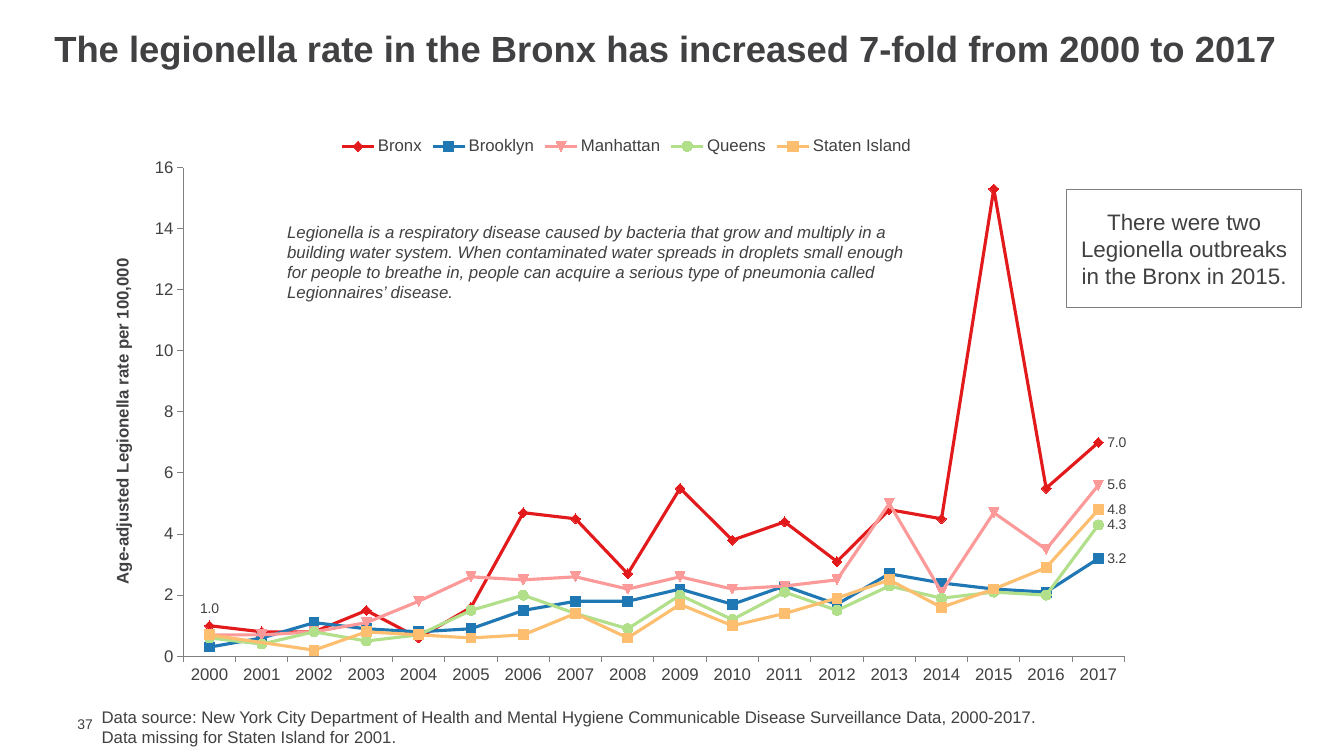
from dataclasses import dataclass

from lxml.etree import SubElement
from pptx import Presentation
from pptx.chart.chart import Chart
from pptx.chart.data import CategoryChartData
from pptx.dml.color import RGBColor
from pptx.enum.chart import XL_CHART_TYPE as ChartType
from pptx.enum.chart import XL_LABEL_POSITION as LabelPosition
from pptx.enum.chart import XL_LEGEND_POSITION as LegendPosition
from pptx.enum.chart import XL_MARKER_STYLE as Marker
from pptx.enum.chart import XL_TICK_MARK as TickMark
from pptx.enum.shapes import MSO_SHAPE as ShapeKind
from pptx.enum.text import MSO_ANCHOR as Anchor
from pptx.enum.text import PP_ALIGN as Align
from pptx.oxml.ns import qn
from pptx.slide import Slide
from pptx.text.text import Font, TextFrame
from pptx.util import Inches, Pt


@dataclass(frozen=True)
class Theme:
    font: str = "Arial"
    ink: str = "414042"
    rule: str = "808080"
    paper: str = "FFFFFF"
    title: int = 26
    callout: int = 16
    body: int = 12
    small: int = 10
    hairline: float = 0.75
    series_line: float = 2.25
    marker: int = 7


@dataclass(frozen=True)
class TextBlock:
    text: str
    left: float
    top: float
    width: float
    height: float
    size: int
    bold: bool = False
    italic: bool = False
    anchor: Anchor = Anchor.TOP
    line_spacing: float = 1.0
    margin: float = 0.05
    right_margin: float = 0.1


@dataclass(frozen=True)
class Borough:
    name: str
    rates: tuple[float | None, ...]
    color: str
    marker: Marker | None = None


THEME = Theme()
YEARS = range(2000, 2018)
PLOT_AREA = {"x": 0.072, "y": 0.074, "w": 0.909, "h": 0.869}

BOROUGHS = (
    Borough("Bronx", (1, 0.8, 0.8, 1.5, 0.6, 1.6, 4.7, 4.5, 2.7, 5.5, 3.8, 4.4,
                      3.1, 4.8, 4.5, 15.3, 5.5, 7), "E31A1C", Marker.DIAMOND),
    Borough("Brooklyn", (0.3, 0.6, 1.1, 0.9, 0.8, 0.9, 1.5, 1.8, 1.8, 2.2, 1.7, 2.3,
                         1.7, 2.7, 2.4, 2.2, 2.1, 3.2), "1F78B4", Marker.SQUARE),
    Borough("Manhattan", (0.7, 0.7, 0.8, 1.1, 1.8, 2.6, 2.5, 2.6, 2.2, 2.6, 2.2, 2.3,
                          2.5, 5, 2.1, 4.7, 3.5, 5.6), "FB9A99"),
    Borough("Queens", (0.6, 0.4, 0.8, 0.5, 0.7, 1.5, 2, 1.4, 0.9, 2, 1.2, 2.1,
                       1.5, 2.3, 1.9, 2.1, 2, 4.3), "B2DF8A", Marker.CIRCLE),
    Borough("Staten Island", (0.7, None, 0.2, 0.8, 0.7, 0.6, 0.7, 1.4, 0.6, 1.7, 1, 1.4,
                              1.9, 2.5, 1.6, 2.2, 2.9, 4.8), "FDBF6F", Marker.SQUARE),
)

PAGE_NUMBER = TextBlock("37", 0.67, 7.1, 0.43, 0.17, THEME.small,
                        anchor=Anchor.MIDDLE, margin=0, right_margin=0)
SOURCE = TextBlock(
    "Data source: New York City Department of Health and Mental Hygiene "
    "Communicable Disease Surveillance Data, 2000-2017.\n"
    "Data missing for Staten Island for 2001.",
    0.91, 6.96, 9.92, 0.71, THEME.body)
TITLE = TextBlock(
    "The legionella rate in the Bronx has increased 7-fold from 2000 to 2017",
    0.44, 0.29, 12.46, 0.45, THEME.title, bold=True, anchor=Anchor.MIDDLE,
    line_spacing=0.8)
DEFINITION = TextBlock(
    "Legionella is a respiratory disease caused by bacteria that grow and multiply in a "
    "building water system. When contaminated water spreads in droplets small enough for "
    "people to breathe in, people can acquire a serious type of pneumonia called "
    "Legionnaires’ disease.",
    2.75, 2.15, 6.5, 0.91, THEME.body, italic=True)


def style_font(font: Font, size: int, bold: bool = False, italic: bool = False) -> None:
    """Apply the theme typeface and ink to a font."""
    font.name, font.size, font.bold, font.italic = THEME.font, Pt(size), bold, italic
    font.color.rgb = RGBColor.from_string(THEME.ink)


def style_text(frame: TextFrame, size: int, bold: bool = False, italic: bool = False) -> None:
    """Format every run of a text frame."""
    for paragraph in frame.paragraphs:
        for run in paragraph.runs:
            style_font(run.font, size, bold, italic)


def add_text(slide: Slide, block: TextBlock) -> None:
    """Draw a wrapped text box."""
    shape = slide.shapes.add_textbox(*map(Inches, (block.left, block.top, block.width, block.height)))
    frame = shape.text_frame
    frame.word_wrap = True
    frame.vertical_anchor = block.anchor
    frame.margin_top = frame.margin_bottom = Inches(block.margin)
    frame.margin_right = Inches(block.right_margin)
    frame.text = block.text
    for paragraph in frame.paragraphs:
        paragraph.line_spacing = block.line_spacing
    style_text(frame, block.size, block.bold, block.italic)


def add_callout(slide: Slide) -> None:
    """Draw the framed note on the 2015 outbreaks."""
    shape = slide.shapes.add_shape(ShapeKind.RECTANGLE, *map(Inches, (10.58, 1.88, 2.33, 1.17)))
    shape.shadow.inherit = False
    shape.fill.solid()
    shape.fill.fore_color.rgb = RGBColor.from_string(THEME.paper)
    shape.line.color.rgb = RGBColor.from_string(THEME.rule)
    shape.line.width = Pt(THEME.hairline)
    frame = shape.text_frame
    frame.word_wrap = True
    frame.vertical_anchor = Anchor.MIDDLE
    frame.text = "There were two Legionella outbreaks in the Bronx in 2015."
    frame.paragraphs[0].alignment = Align.CENTER
    style_text(frame, THEME.callout)


def style_axes(chart: Chart) -> None:
    """Set the scale, ticks, lines and title of both axes."""
    for axis in (chart.category_axis, chart.value_axis):
        axis.has_major_gridlines = False
        axis.major_tick_mark = TickMark.OUTSIDE
        axis.minor_tick_mark = TickMark.NONE
        axis.format.line.color.rgb = RGBColor.from_string(THEME.rule)
        axis.format.line.width = Pt(THEME.hairline)
        style_font(axis.tick_labels.font, THEME.body)
    value_axis = chart.value_axis
    value_axis.minimum_scale, value_axis.maximum_scale, value_axis.major_unit = 0, 16, 2
    value_axis.tick_labels.number_format = "0"
    value_axis.tick_labels.number_format_is_linked = False
    frame = value_axis.axis_title.text_frame
    frame.text = "Age-adjusted Legionella rate per 100,000"
    style_text(frame, THEME.body, bold=True)
    value_axis.axis_title.element.xpath(".//a:bodyPr")[0].set("rot", "-5400000")


def style_series(chart: Chart) -> None:
    """Colour each borough and label its last rate, plus the first for the Bronx."""
    for series, borough in zip(chart.plots[0].series, BOROUGHS):
        color = RGBColor.from_string(borough.color)
        series.smooth = False
        series.format.line.color.rgb = color
        series.format.line.width = Pt(THEME.series_line)
        if borough.marker is not None:
            series.marker.style = borough.marker
        series.marker.size = THEME.marker
        series.marker.format.fill.solid()
        series.marker.format.fill.fore_color.rgb = color
        series.marker.format.line.color.rgb = color
        series.data_labels.show_value = False
        labels = {len(YEARS) - 1: LabelPosition.RIGHT}
        if borough.name == "Bronx":
            labels[0] = LabelPosition.ABOVE
        for index, position in labels.items():
            label = series.points[index].data_label
            style_font(label.font, THEME.small)
            label.position = position


def place_plot(chart: Chart) -> None:
    """Fix the inner plot area and bridge the missing year."""
    plot_area = chart.element.xpath(".//c:plotArea")[0]
    for layout in plot_area.findall(qn("c:layout")):
        plot_area.remove(layout)
    layout = SubElement(plot_area, qn("c:layout"))
    plot_area.insert(0, layout)
    manual = SubElement(layout, qn("c:manualLayout"))
    settings = {"layoutTarget": "inner", "xMode": "edge", "yMode": "edge", **PLOT_AREA}
    for name, value in settings.items():
        SubElement(manual, qn(f"c:{name}")).set("val", str(value))
    chart.element.xpath(".//c:dispBlanksAs")[0].set("val", "span")


def add_rate_chart(slide: Slide) -> None:
    """Draw the line chart of rates by borough."""
    data = CategoryChartData(number_format="0.0")
    data.categories = [str(year) for year in YEARS]
    for borough in BOROUGHS:
        data.add_series(borough.name, borough.rates)
    chart = slide.shapes.add_chart(
        ChartType.LINE_MARKERS, *map(Inches, (1.08, 1.25, 10.27, 5.58)), data).chart
    chart.has_title = False
    style_font(chart.font, THEME.small)
    chart.has_legend = True
    chart.legend.position = LegendPosition.TOP
    chart.legend.include_in_layout = False
    style_font(chart.legend.font, THEME.body)
    chart.plots[0].vary_by_categories = False
    style_axes(chart)
    style_series(chart)
    place_plot(chart)


def main() -> None:
    """Build and save the slide."""
    presentation = Presentation()
    presentation.slide_width, presentation.slide_height = Inches(13.33), Inches(7.5)
    slide = presentation.slides.add_slide(presentation.slide_layouts[6])
    add_text(slide, PAGE_NUMBER)
    add_text(slide, SOURCE)
    add_rate_chart(slide)
    add_text(slide, TITLE)
    add_callout(slide)
    add_text(slide, DEFINITION)
    presentation.save("out.pptx")


if __name__ == "__main__":
    main()
